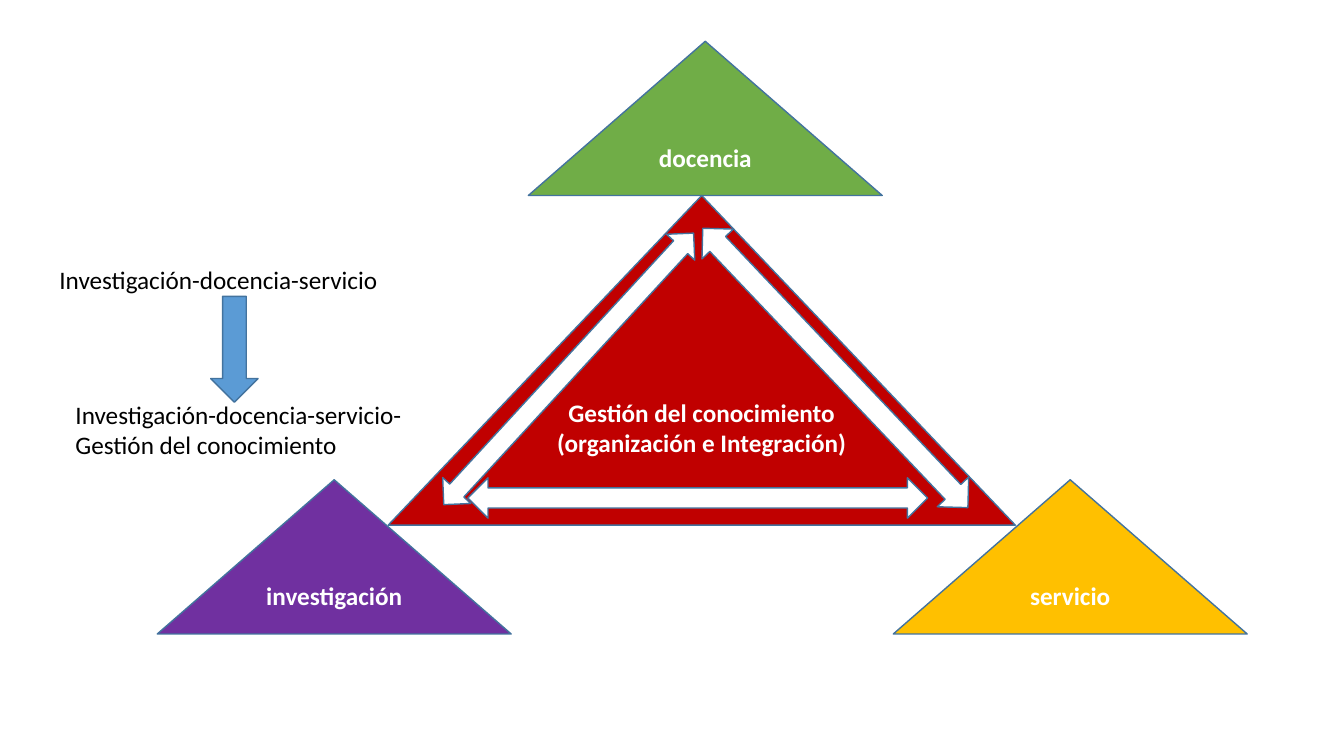
"""Build the slide on knowledge management among teaching, research and service."""
from dataclasses import dataclass

from pptx import Presentation
from pptx import util as u
from pptx.dml import color
from pptx.enum import shapes, text

OUTLINE = "43739E"
LABEL_FORMAT = {"name": "Calibri", "size": u.Pt(18), "bold": True}
NOTE_FORMAT = {"name": "Calibri", "size": u.Pt(18), "bold": False}


@dataclass(frozen=True)
class Figure:
    kind: shapes.MSO_SHAPE
    left: float
    top: float
    width: float
    height: float
    fill: str
    lines: tuple[str, ...] = ()
    rotation: float = 0
    bottom_inset: float = 0.05


@dataclass(frozen=True)
class Note:
    left: float
    top: float
    width: float
    height: float
    lines: tuple[str, ...]


TRIANGLE = shapes.MSO_SHAPE.ISOSCELES_TRIANGLE
TWO_WAY = shapes.MSO_SHAPE.UP_DOWN_ARROW
CORNER_SIZE = (3.51, 1.53)

FIGURES = (
    Figure(TRIANGLE, 5.24, 0.41, *CORNER_SIZE, "70AD47", ("docencia",)),
    Figure(TRIANGLE, 8.86, 4.76, *CORNER_SIZE, "FFC000", ("servicio",)),
    Figure(TRIANGLE, 1.56, 4.76, *CORNER_SIZE, "7030A0", ("investigación",)),
    Figure(TRIANGLE, 3.85, 1.94, 6.22, 3.27, "C00000",
           ("Gestión del conocimiento", "(organización e Integración)"),
           bottom_inset=0.35),
    Figure(TWO_WAY, 6.72, 2.66, 0.4, 4.56, "FFFFFF", rotation=270),
    Figure(TWO_WAY, 8.07, 1.74, 0.43, 3.82, "FFFFFF", rotation=316.5),
    Figure(TWO_WAY, 5.45, 1.83, 0.38, 3.66, "FFFFFF", rotation=42.6),
    Figure(shapes.MSO_SHAPE.RIGHT_ARROW, 1.8, 3.23, 1.05, 0.47, "5B9BD5", rotation=90),
)

NOTES = (
    Note(0.49, 2.57, 3.41, 0.4, ("Investigación-docencia-servicio",)),
    Note(0.65, 3.91, 3.55, 0.71,
         ("Investigación-docencia-servicio-", "Gestión del conocimiento")),
)


def rgb(value: str) -> color.RGBColor:
    return color.RGBColor.from_string(value)


def bounds(item: Figure | Note) -> tuple[u.Length, ...]:
    return tuple(u.Inches(n) for n in (item.left, item.top, item.width, item.height))


def write(frame, lines: tuple[str, ...], formats: dict, ink: str, align) -> None:
    frame.word_wrap = True
    for index, line in enumerate(lines):
        para = frame.add_paragraph() if index else frame.paragraphs[0]
        para.alignment = align
        span = para.add_run()
        span.text = line
        for key, value in formats.items():
            setattr(span.font, key, value)
        span.font.color.rgb = rgb(ink)


def draw_figure(page, figure: Figure) -> None:
    shape = page.shapes.add_shape(figure.kind, *bounds(figure))
    shape.rotation = figure.rotation
    shape.shadow.inherit = False
    shape.fill.solid()
    shape.fill.fore_color.rgb = rgb(figure.fill)
    shape.line.color.rgb = rgb(OUTLINE)
    shape.line.width = u.Pt(1)
    if figure.lines:
        frame = shape.text_frame
        frame.vertical_anchor = text.MSO_ANCHOR.MIDDLE
        frame.margin_bottom = u.Inches(figure.bottom_inset)
        write(frame, figure.lines, LABEL_FORMAT, "FFFFFF", text.PP_ALIGN.CENTER)


def draw_note(page, note: Note) -> None:
    box = page.shapes.add_textbox(*bounds(note))
    write(box.text_frame, note.lines, NOTE_FORMAT, "000000", text.PP_ALIGN.LEFT)
    box.text_frame.auto_size = text.MSO_AUTO_SIZE.SHAPE_TO_FIT_TEXT


def main() -> None:
    deck = Presentation()
    deck.slide_width, deck.slide_height = u.Inches(13.33), u.Inches(7.5)
    page = deck.slides.add_slide(deck.slide_layouts.get_by_name("Blank"))
    for figure in FIGURES:
        draw_figure(page, figure)
    for note in NOTES:
        draw_note(page, note)
    deck.save("out.pptx")


if __name__ == "__main__":
    main()
